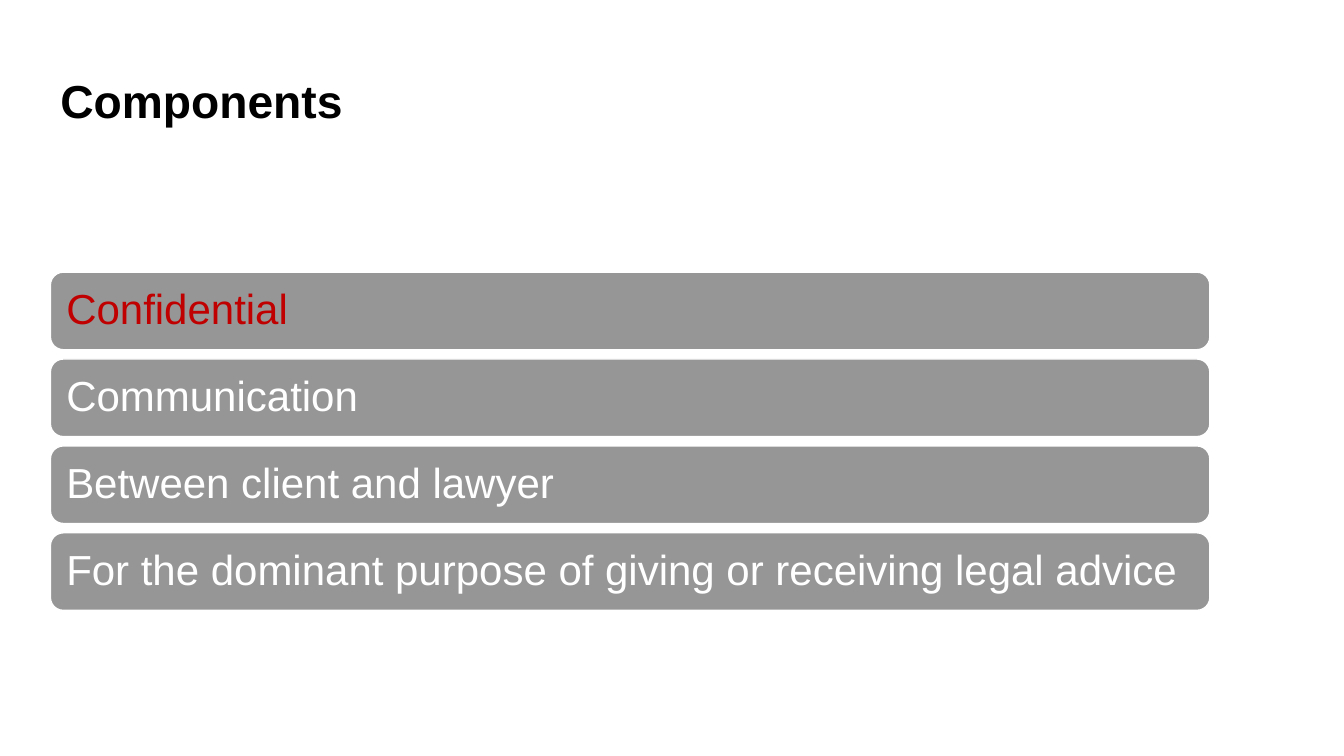
from pptx import Presentation
from pptx.dml.color import RGBColor
from pptx.enum import shapes, text
from pptx.util import Inches, Pt

COLORS = {"title": "000000", "bar": "969696", "white": "FFFFFF", "highlight": "C00000"}

COMPONENTS = [
    ("Confidential", "highlight"),
    ("Communication", "white"),
    ("Between client and lawyer", "white"),
    ("For the dominant purpose of giving or receiving legal advice", "white"),
]
BAR_TOP, BAR_STEP = 2.7, 0.862


def color(name):
    return RGBColor.from_string(COLORS[name])


def write(shape, wording, size, color_name, bold=False):
    """Set one left-aligned, vertically centred line of text in a shape."""
    frame = shape.text_frame
    frame.word_wrap = True
    frame.vertical_anchor = text.MSO_ANCHOR.MIDDLE
    paragraph = frame.paragraphs[0]
    paragraph.alignment = text.PP_ALIGN.LEFT
    paragraph.line_spacing = 0.9
    run = paragraph.add_run()
    run.text = wording
    run.font.name = "Arial"
    run.font.size = Pt(size)
    run.font.bold = bold
    run.font.color.rgb = color(color_name)


prs = Presentation()
prs.slide_width, prs.slide_height = Inches(13.33), Inches(7.5)
slide = prs.slides.add_slide(prs.slide_layouts[6])

title = slide.shapes.add_textbox(Inches(0.5), Inches(0.4), Inches(10.15), Inches(1.25))
write(title, "Components", 33, "title", bold=True)

for row, (component, color_name) in enumerate(COMPONENTS):
    bar = slide.shapes.add_shape(
        shapes.MSO_SHAPE.ROUNDED_RECTANGLE,
        Inches(0.5), Inches(BAR_TOP + row * BAR_STEP), Inches(11.5), Inches(0.77))
    bar.shadow.inherit = False
    bar.fill.solid()
    bar.fill.fore_color.rgb = color("bar")
    bar.line.color.rgb = color("white")
    bar.line.width = Pt(1)
    frame = bar.text_frame
    frame.margin_left = frame.margin_right = Inches(0.12)
    frame.margin_top = frame.margin_bottom = Inches(0.12)
    write(bar, component, 30, color_name)

prs.save("out.pptx")
